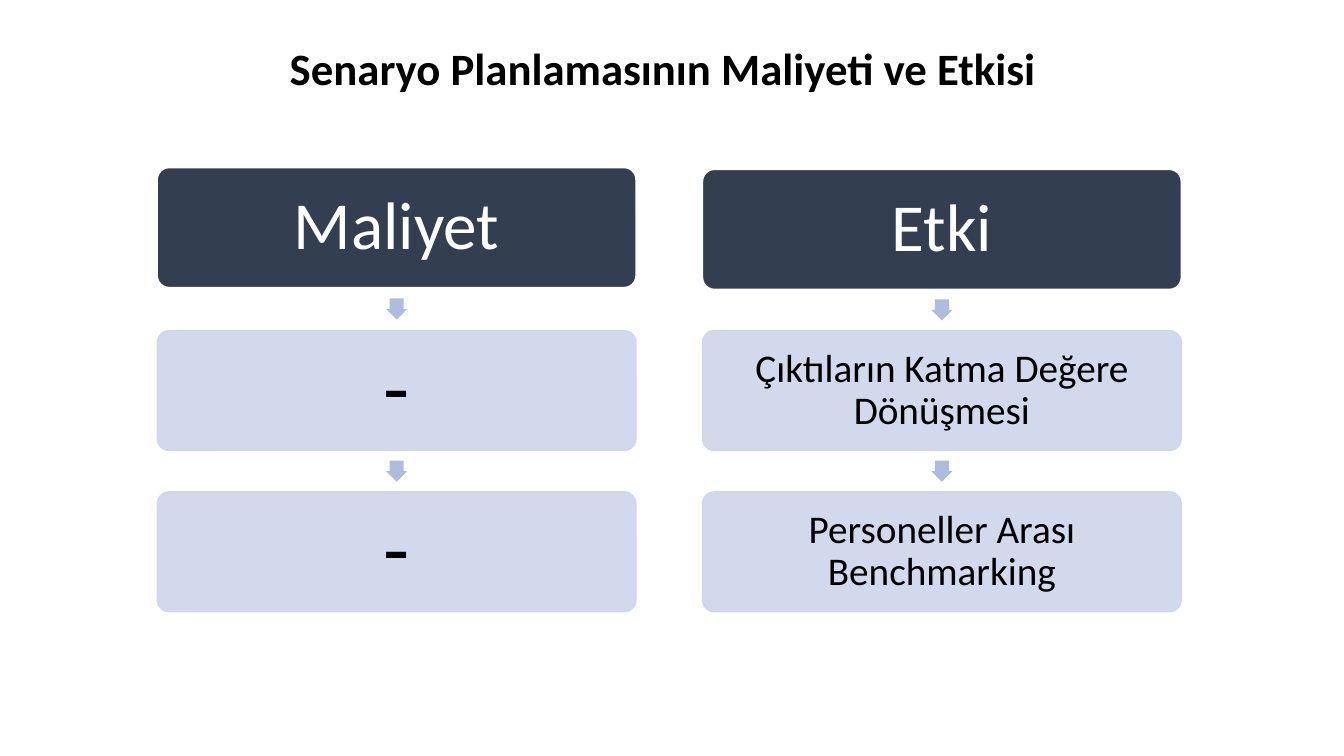
import pptx
import pptx.util
import pptx.dml.color
import pptx.enum.shapes
import pptx.enum.text
import pptx.oxml
import pptx.oxml.ns

Pt = pptx.util.Pt
RGB = pptx.dml.color.RGBColor
SHAPE = pptx.enum.shapes.MSO_SHAPE
NAVY = RGB(0x33, 0x3F, 0x50)
PALE = RGB(0xCF, 0xD5, 0xEA)
ARROW = RGB(0xB0, 0xBC, 0xDE)
WHITE = RGB(0xFF, 0xFF, 0xFF)
BLACK = RGB(0, 0, 0)
FONT = "Calibri"
CARD_W, CARD_H, ARROW_SIZE = 342, 85.7, 15.1


def add_text(s, text, size, color, inset, bold=False):
    """Write one centred paragraph into a shape."""
    tf = s.text_frame
    tf.word_wrap = True
    tf.vertical_anchor = pptx.enum.text.MSO_ANCHOR.MIDDLE
    tf.margin_left = tf.margin_right = Pt(inset)
    tf.margin_top = tf.margin_bottom = Pt(inset)
    p = tf.paragraphs[0]
    p.alignment = pptx.enum.text.PP_ALIGN.CENTER
    p.line_spacing = 0.9
    r = p.add_run()
    r.text = text
    r.font.name = FONT
    r.font.size = Pt(size)
    r.font.bold = bold
    r.font.color.rgb = color


def set_opacity(s, percent):
    """Make the solid fill and line of a shape partly transparent."""
    for clr in s._element.spPr.iter(pptx.oxml.ns.qn("a:srgbClr")):
        alpha = clr.makeelement(pptx.oxml.ns.qn("a:alpha"), {"val": str(percent * 1000)})
        clr.append(alpha)


def add_card(sp, x, y, text, size, fill, line, color, inset):
    """Draw one rounded card with its text."""
    s = sp.add_shape(SHAPE.ROUNDED_RECTANGLE, Pt(x), Pt(y), Pt(CARD_W), Pt(CARD_H))
    s.adjustments[0] = 0.1
    s.shadow.inherit = False
    s.fill.solid()
    s.fill.fore_color.rgb = fill
    s.line.color.rgb = line
    s.line.width = Pt(1)
    add_text(s, text, size, color, inset)
    return s


def add_arrow(sp, cx, cy):
    """Draw a small downward arrow centred on a point."""
    half = ARROW_SIZE / 2
    s = sp.add_shape(SHAPE.RIGHT_ARROW, Pt(cx - half), Pt(cy - half), Pt(ARROW_SIZE), Pt(ARROW_SIZE))
    s.rotation = 90
    s.adjustments[0] = 0.667
    s.adjustments[1] = 0.5
    s.shadow.inherit = False
    s.fill.solid()
    s.fill.fore_color.rgb = ARROW
    s.line.fill.background()


def add_column(sp, x, head_y, first_y, pitch, heading, items, size, inset):
    """Draw a heading card followed by arrows and item cards."""
    add_card(sp, x, head_y, heading, 48, NAVY, WHITE, WHITE, 5)
    above = head_y + CARD_H
    for i, item in enumerate(items):
        y = first_y + i * pitch
        add_arrow(sp, x + CARD_W / 2, (above + y) / 2)
        s = add_card(sp, x, y, item, size, PALE, PALE, BLACK, inset)
        set_opacity(s, 90)
        above = y + CARD_H


def add_title(sp, x, y, w, h, text):
    """Draw the slide heading."""
    s = sp.add_textbox(Pt(x), Pt(y), Pt(w), Pt(h))
    add_text(s, text, 32, BLACK, 4, bold=True)


def main():
    """Build and save the slide."""
    prs = pptx.Presentation()
    prs.slide_width, prs.slide_height = Pt(960), Pt(540)
    sp = prs.slides.add_slide(prs.slide_layouts[6]).shapes
    add_column(sp, 112.3, 119.7, 236.1, 115.2, "Maliyet", ["-", "-"], 61, 5.5)
    add_column(sp, 501.8, 121, 236.1, 115.2, "Etki",
               ["Çıktıların Katma Değere Dönüşmesi", "Personeller Arası Benchmarking"], 28, 3)
    add_title(sp, 167, 23.8, 620.6, 54, "Senaryo Planlamasının Maliyeti ve Etkisi ")
    prs.save("out.pptx")


if __name__ == "__main__":
    main()
